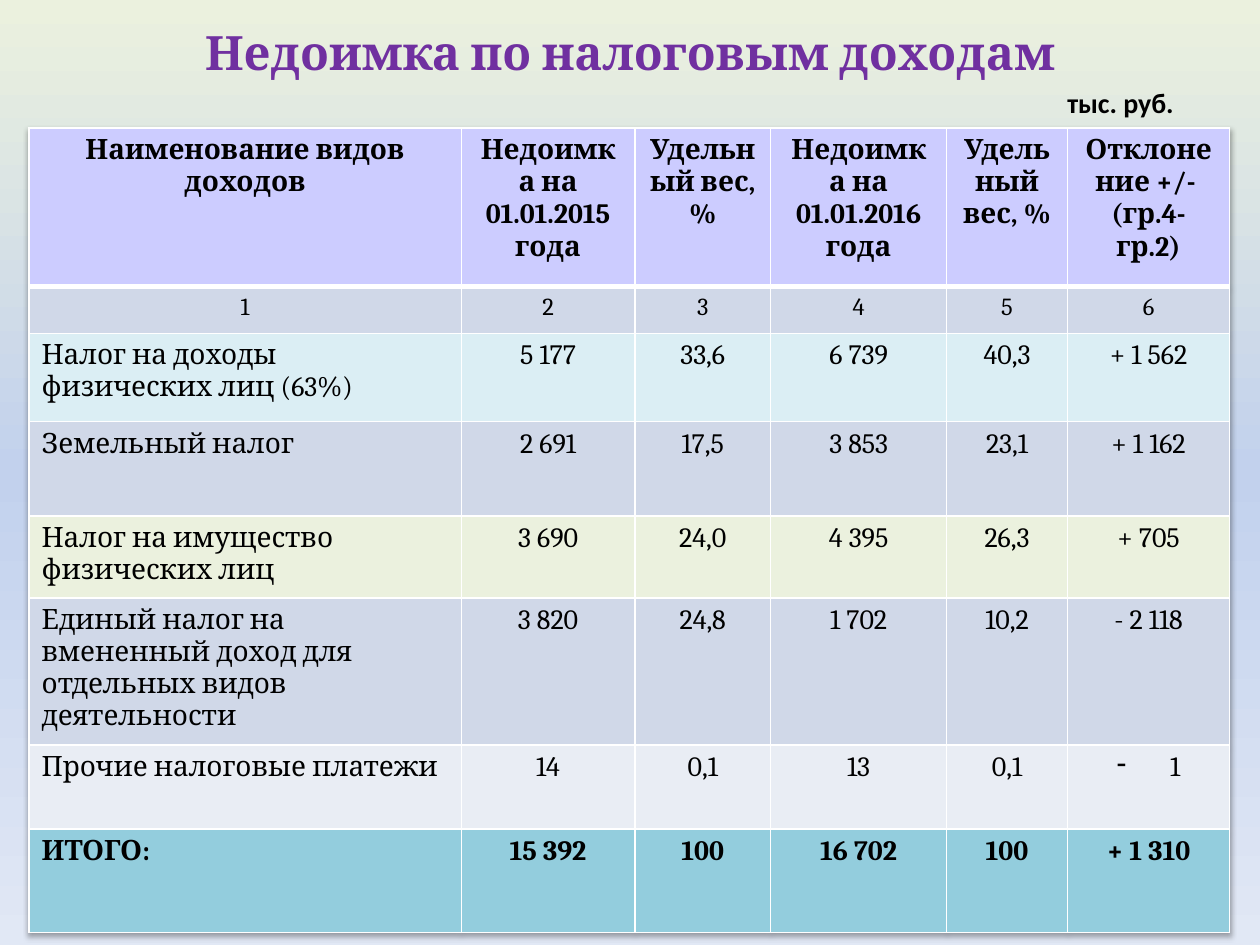
from copy import deepcopy
from dataclasses import dataclass

from lxml.etree import SubElement
from pptx import Presentation
from pptx.dml.color import RGBColor
from pptx.enum.text import MSO_ANCHOR as Anchor, PP_ALIGN as Align
from pptx.oxml.ns import qn
from pptx.util import Pt


@dataclass
class Style:
    size: float
    font: str = "Cambria"
    color: str = "000000"
    bold: bool = False


@dataclass
class TableRow:
    height: float
    fill: str
    style: Style
    texts: tuple[str, ...]
    first_align: Align = Align.LEFT


HEADER = Style(16, bold=True)
BODY = Style(16)
COLUMN_WIDTHS = (247, 99.2, 77.6, 100.6, 69, 92.8)
ROWS = (
    TableRow(90.7, "CCCCFF", HEADER, (
        "Наименование видов доходов", "Недоимка на 01.01.2015 года", "Удельный вес, %",
        "Недоимка на 01.01.2016 года", "Удельный вес, %", "Отклонение +/- \n(гр.4-гр.2)",
    ), Align.CENTER),
    TableRow(26.6, "D0D8E8", Style(14), ("1", "2", "3", "4", "5", "6"), Align.CENTER),
    TableRow(50.4, "DBEEF4", BODY, (
        "Налог на доходы физических лиц (63%)", "5 177", "33,6", "6 739", "40,3", "+ 1 562")),
    TableRow(54, "D0D8E8", BODY, (
        "Земельный налог", "2 691", "17,5", "3 853", "23,1", "+ 1 162")),
    TableRow(46.8, "EBF1DE", BODY, (
        "Налог на имущество физических лиц", "3 690", "24,0", "4 395", "26,3", "+ 705")),
    TableRow(52.6, "D0D8E8", BODY, (
        "Единый налог на вмененный доход для отдельных видов деятельности",
        "3 820", "24,8", "1 702", "10,2", "- 2 118")),
    TableRow(48.2, "E9EDF4", BODY, (
        "Прочие налоговые платежи", "14", "0,1", "13", "0,1", " 1")),
    TableRow(59, "93CDDD", HEADER, (
        "ИТОГО:", "15 392", "100", "16 702", "100", "+ 1 310")),
)
DASHED_CELL = (6, 5)


def rgb(color: str) -> RGBColor:
    return RGBColor.from_string(color)


def write(frame, text: str, style: Style, align: Align) -> None:
    for index, line in enumerate(text.split("\n")):
        paragraph = frame.add_paragraph() if index else frame.paragraphs[0]
        paragraph.alignment = align
        run = paragraph.add_run()
        run.text = line
        run.font.size = Pt(style.size)
        run.font.name = style.font
        run.font.bold = style.bold
        run.font.color.rgb = rgb(style.color)


def add_label(slide, left: float, top: float, width: float, height: float,
              text: str, style: Style, anchor: Anchor) -> None:
    box = slide.shapes.add_textbox(Pt(left), Pt(top), Pt(width), Pt(height))
    box.text_frame.word_wrap = True
    box.text_frame.vertical_anchor = anchor
    write(box.text_frame, text, style, Align.CENTER)


def add_color(parent, color: str):
    return SubElement(parent, qn("a:srgbClr"), val=color)


def add_border(cell, side: str, width: float) -> None:
    line = SubElement(cell._tc.get_or_add_tcPr(), qn(f"a:ln{side}"), w=str(Pt(width)))
    add_color(SubElement(line, qn("a:solidFill")), "FFFFFF")


def add_dash_bullet(paragraph) -> None:
    properties = paragraph._p.get_or_add_pPr()
    properties.set("marL", str(Pt(27)))
    properties.set("indent", str(Pt(-27)))
    SubElement(properties, qn("a:buFontTx"))
    SubElement(properties, qn("a:buChar"), char="-")


def add_table_shadow(table) -> None:
    properties = table._tbl.tblPr
    effects = SubElement(properties, qn("a:effectLst"))
    properties.insert(0, effects)
    shadow = SubElement(effects, qn("a:outerShdw"), blurRad=str(Pt(3)), dist=str(Pt(2)),
                        dir="5400000", rotWithShape="0")
    SubElement(add_color(shadow, "000000"), qn("a:alpha"), val="35000")


def add_tax_table(slide) -> None:
    total_height = sum(row.height for row in ROWS)
    table = slide.shapes.add_table(len(ROWS), len(COLUMN_WIDTHS), Pt(16.6), Pt(73.2),
                                   Pt(sum(COLUMN_WIDTHS)), Pt(total_height)).table
    add_table_shadow(table)
    for column, width in zip(table.columns, COLUMN_WIDTHS):
        column.width = Pt(width)
    for row_index, row in enumerate(ROWS):
        table.rows[row_index].height = Pt(row.height)
        for column_index, text in enumerate(row.texts):
            cell = table.cell(row_index, column_index)
            align = Align.CENTER if column_index else row.first_align
            write(cell.text_frame, text, row.style, align)
            if (row_index, column_index) == DASHED_CELL:
                add_dash_bullet(cell.text_frame.paragraphs[0])
            top = 3 if row_index == 1 else 1
            bottom = 3 if row_index == 0 else 1
            for side, width in (("L", 1), ("R", 1), ("T", top), ("B", bottom)):
                add_border(cell, side, width)
            cell.fill.solid()
            cell.fill.fore_color.rgb = rgb(row.fill)


def paint_background(slide, colors: tuple[str, ...]) -> None:
    fill = slide.background.fill
    fill.gradient()
    fill.gradient_angle = 270
    first = fill.gradient_stops[0]._gs
    first.addnext(deepcopy(first))
    for index, (stop, color) in enumerate(zip(fill.gradient_stops, colors)):
        stop.position = index / (len(colors) - 1)
        stop.color.rgb = rgb(color)


def main() -> None:
    presentation = Presentation()
    presentation.slide_width, presentation.slide_height = Pt(720), Pt(540)
    slide = presentation.slides.add_slide(presentation.slide_layouts[6])
    paint_background(slide, ("EBF1DE", "C2D1ED", "E1E8F5"))
    add_label(slide, 20, 9.4, 680, 39.6, "Недоимка по налоговым доходам",
              Style(27, color="7030A0", bold=True), Anchor.MIDDLE)
    add_tax_table(slide)
    add_label(slide, 578, 45.4, 124.6, 26.6, "тыс. руб.",
              Style(16, "Calibri", bold=True), Anchor.TOP)
    presentation.save("out.pptx")


if __name__ == "__main__":
    main()
